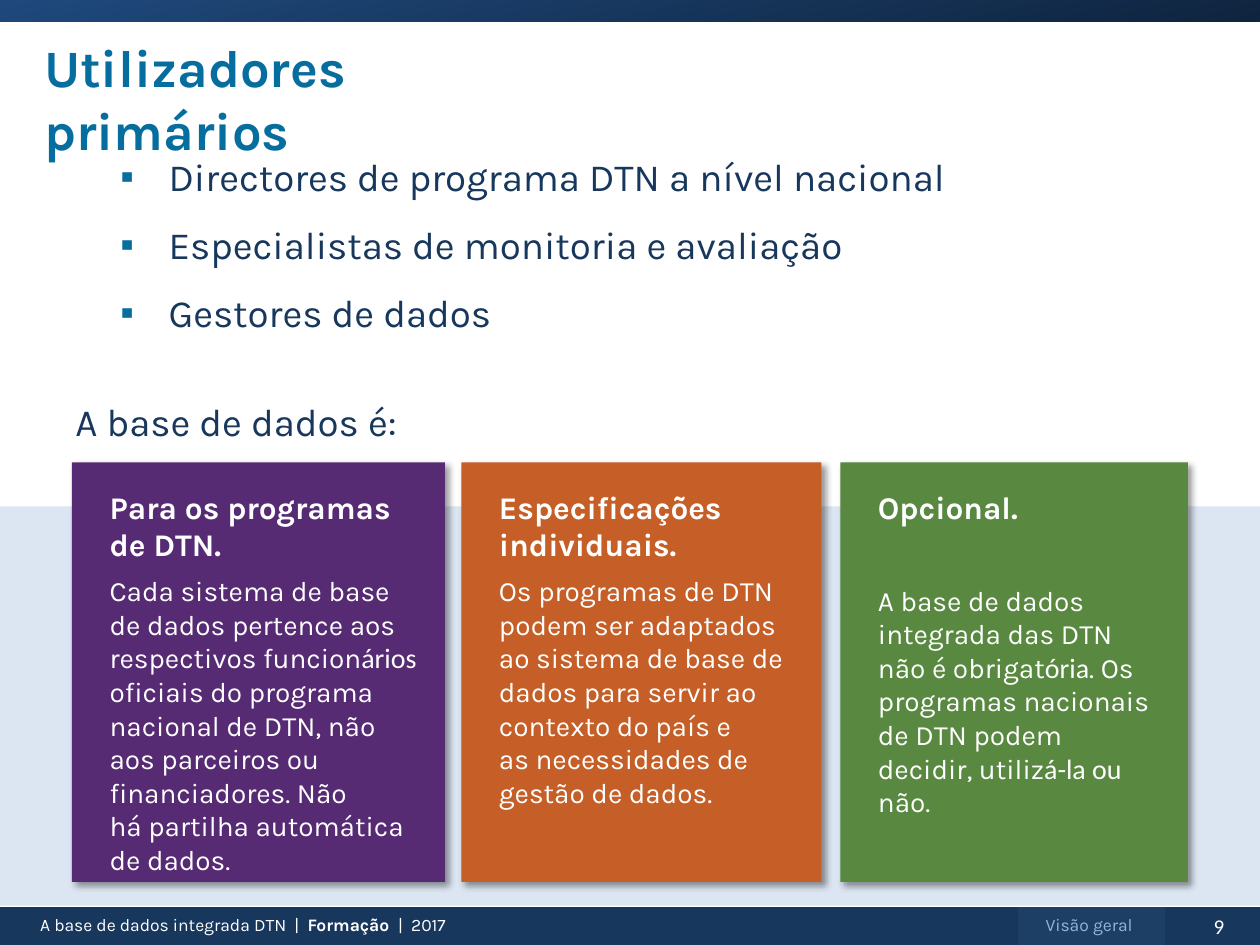
from lxml.etree import SubElement
from pptx import Presentation
from pptx.dml.color import RGBColor
from pptx.enum.shapes import MSO_SHAPE as Preset
from pptx.enum.text import MSO_ANCHOR as Anchor, PP_ALIGN as Align
from pptx.oxml.ns import qn
from pptx.util import Cm, Pt

NAVY = RGBColor(0x17, 0x37, 0x5D)
HEADER_START = RGBColor(0x1F, 0x49, 0x7D)
HEADER_END = RGBColor(0x0F, 0x24, 0x3E)
TAB_BLUE = RGBColor(0x1E, 0x3F, 0x65)
TAB_TEXT = RGBColor(0x95, 0xB3, 0xD7)
PALE_BLUE = RGBColor(0xDC, 0xE6, 0xF2)
TEAL = RGBColor(0x06, 0x6E, 0x9F)
PURPLE = RGBColor(0x56, 0x2B, 0x73)
ORANGE = RGBColor(0xC5, 0x5F, 0x27)
GREEN = RGBColor(0x59, 0x88, 0x41)
WHITE = RGBColor(0xFF, 0xFF, 0xFF)
MAIN_FONT, ACCENT_FONT = "Karla", "Calibri"

CARD_TOP, CARD_HEIGHT = 9.32, 8.46
USERS = [
    "Directores de programa DTN a nível nacional",
    "Especialistas de monitoria e avaliação",
    "Gestores de dados",
]
# Left, width, colour, heading, space after heading, body pieces.
# Body pieces alternate between the main font and the accent font.
CARDS = [
    (1.45, 7.52, PURPLE, "Para os programas de DTN.", 6, [
        "Cada sistema de base de dados pertence aos respectivos funcion",
        "ários ",
        "oficiais do programa nacional de DTN, não aos parceiros ou "
        "financiadores. Não \vhá partilha automática de dados."]),
    (9.3, 7.26, ORANGE, "Especificações individuais.", 6, [
        "Os programas de DTN podem ser adaptados ao sistema de base de dados "
        "para servir ao contexto do país e \vas necessidades de gestão de dados."]),
    (16.94, 7.01, GREEN, "Opcional.", 33, [
        "A base de dados integrada das DTN não é obrigat",
        "ória",
        ". Os programas nacionais de DTN podem decidir, utiliz",
        "á-la ou",
        " não."]),
]


def format_run(run, size, color, bold=False, font=MAIN_FONT):
    run.font.name = font
    run.font.size = Pt(size)
    run.font.bold = bold
    run.font.color.rgb = color


def format_runs(paragraph, size, color, bold=False, font=MAIN_FONT):
    for run in paragraph.runs:
        format_run(run, size, color, bold, font)


def add_rectangle(slide, left, top, width, height, color):
    shape = slide.shapes.add_shape(
        Preset.RECTANGLE, Cm(left), Cm(top), Cm(width), Cm(height))
    shape.shadow.inherit = False
    shape.fill.solid()
    shape.fill.fore_color.rgb = color
    shape.line.fill.background()
    return shape


def add_header_bar(slide):
    bar = add_rectangle(slide, 0, 0, 25.4, 0.43, HEADER_START)
    bar.fill.gradient()
    bar.fill.gradient_angle = 282
    for stop, color, position in zip(
            bar.fill.gradient_stops, (HEADER_START, HEADER_END), (0, 1)):
        stop.color.rgb = color
        stop.position = position


def add_text(slide, left, top, width, height, text, size, color,
             bold=False, font=MAIN_FONT, align=Align.LEFT, anchor=Anchor.TOP):
    box = slide.shapes.add_textbox(Cm(left), Cm(top), Cm(width), Cm(height))
    frame = box.text_frame
    frame.word_wrap = True
    frame.vertical_anchor = anchor
    frame.text = text
    for paragraph in frame.paragraphs:
        paragraph.alignment = align
        format_runs(paragraph, size, color, bold, font)
    return box


def add_bullet(paragraph):
    properties = paragraph._p.get_or_add_pPr()
    properties.set("marL", str(Cm(1.45)))
    properties.set("indent", str(-Cm(0.97)))
    color = SubElement(properties, qn("a:buClr"))
    SubElement(color, qn("a:srgbClr"), val=str(TEAL))
    SubElement(properties, qn("a:buFont"), typeface="Arial")
    SubElement(properties, qn("a:buChar"), char="▪")


def add_user_list(slide):
    box = add_text(slide, 1.7, 2.97, 21.59, 5, "\n".join(USERS), 22, NAVY)
    for paragraph in box.text_frame.paragraphs:
        paragraph.space_before = Pt(4.4)
        paragraph.space_after = Pt(8)
        add_bullet(paragraph)


def add_drop_shadow(shape):
    effects = shape._element.spPr.find(qn("a:effectLst"))
    shadow = SubElement(
        effects, qn("a:outerShdw"), blurRad=str(Pt(4)), dist=str(Pt(3)),
        dir=str(45 * 60000), algn="tl", rotWithShape="0")
    color = SubElement(shadow, qn("a:srgbClr"), val="000000")
    SubElement(color, qn("a:alpha"), val="40000")


def add_card(slide, left, width, color, heading, heading_gap, pieces):
    card = add_rectangle(slide, left, CARD_TOP, width, CARD_HEIGHT, color)
    add_drop_shadow(card)
    frame = card.text_frame
    frame.word_wrap = True
    frame.vertical_anchor = Anchor.TOP
    frame.margin_left = Cm(0.76)
    frame.margin_top = frame.margin_right = Cm(0.51)
    frame.margin_bottom = 0
    frame.text = heading
    title = frame.paragraphs[0]
    title.alignment = Align.LEFT
    title.space_after = Pt(heading_gap)
    format_runs(title, 18, WHITE, bold=True)

    body = frame.add_paragraph()
    body.alignment = Align.LEFT
    for index, piece in enumerate(pieces):
        font = ACCENT_FONT if index % 2 else MAIN_FONT
        for part, line in enumerate(piece.split("\v")):
            if part:
                body.add_line_break()
            run = body.add_run()
            run.text = line
            format_run(run, 16, WHITE, font=font)


def add_footer(slide):
    add_rectangle(slide, 0, 18.29, 25.4, 0.76, NAVY)
    add_text(slide, 23.75, 18.29, 1.65, 0.76, "9", 12, WHITE,
             font=ACCENT_FONT, align=Align.CENTER, anchor=Anchor.MIDDLE)
    label = add_text(slide, 0.56, 18.31, 11.5, 0.69,
                     "A base de dados integrada DTN  |  ", 10, WHITE)
    paragraph = label.text_frame.paragraphs[0]
    for text, bold in (("Formação  ", True), ("|  2017", False)):
        run = paragraph.add_run()
        run.text = text
        format_run(run, 10, WHITE, bold)
    add_rectangle(slide, 20.52, 18.29, 2.97, 0.76, TAB_BLUE)
    add_text(slide, 20.52, 18.31, 2.87, 0.69, "Visão geral", 10, TAB_TEXT,
             align=Align.CENTER)


def add_title(slide):
    title = add_text(slide, 0.38, 0.58, 12.22, 1.63, "Utilizadores primários",
                     30, TEAL, bold=True)
    title.text_frame.margin_left = title.text_frame.margin_right = Cm(0.51)


def main():
    presentation = Presentation()
    presentation.slide_width, presentation.slide_height = Cm(25.4), Cm(19.05)
    slide = presentation.slides.add_slide(presentation.slide_layouts[6])
    add_header_bar(slide)
    add_footer(slide)
    add_rectangle(slide, 0, 10.21, 25.4, 8.05, PALE_BLUE)
    add_user_list(slide)
    add_text(slide, 1.27, 7.9, 9.7, 1.19, "A base de dados é:", 22, NAVY)
    for card in CARDS:
        add_card(slide, *card)
    add_title(slide)
    presentation.save("out.pptx")


if __name__ == "__main__":
    main()
